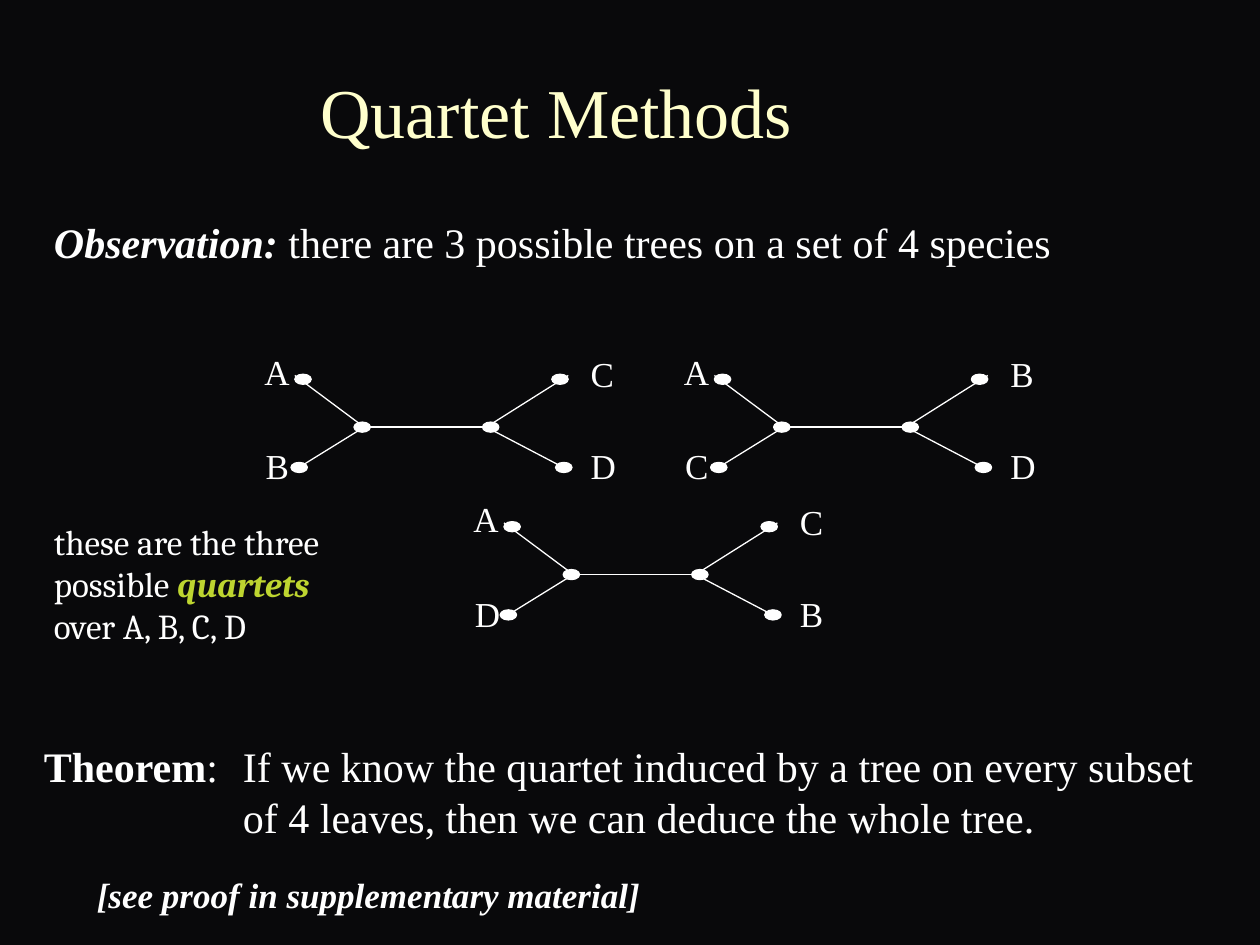
from lxml.etree import SubElement
from pptx import Presentation
from pptx.dml.color import RGBColor
from pptx.enum.shapes import MSO_CONNECTOR as CONN, MSO_SHAPE as SHAPE
from pptx.enum.text import MSO_ANCHOR as ANCHOR, PP_ALIGN as ALIGN
from pptx.oxml.ns import qn
from pptx.util import Inches, Pt

# Tree geometry, relative to the tree's top left corner
LEFT_HUB, RIGHT_HUB = (0.89, 0.66), (1.86, 0.66)
BRANCHES = [
    (LEFT_HUB, RIGHT_HUB),
    (RIGHT_HUB, (2.51, 1.0)),
    (RIGHT_HUB, (2.51, 0.25)),
    (LEFT_HUB, (0.34, 1.0)),
    (LEFT_HUB, (0.34, 0.25)),
]
NODES = [(0.81, 0.62), (1.83, 0.62), (0.34, 0.24),
         (0.31, 0.94), (2.38, 0.24), (2.41, 0.94)]
LABELS = [(0, 0), (0.01, 0.75), (2.59, 0.02), (2.59, 0.75)]

# Origin and leaves: top left, bottom left, top right, bottom right
TREES = [(2.0, 2.73, "ABCD"), (5.33, 2.73, "ACBD"), (3.66, 3.9, "ADCB")]


def rgb(value):
    return RGBColor.from_string(value)


class SlideBuilder:
    font = "Times New Roman"
    background = "09090B"
    ink = "FFFFFF"
    title_color = "FFFFCC"
    accent = "BED530"
    line_width = 0.75

    def __init__(self, prs):
        self.slide = prs.slides.add_slide(prs.slide_layouts[5])
        fill = self.slide.background.fill
        fill.solid()
        fill.fore_color.rgb = rgb(self.background)

    def format_run(self, r, size, color, font=None, bold=False, italic=False):
        r.font.name = font or self.font
        r.font.size = Pt(size)
        r.font.color.rgb = rgb(color)
        r.font.bold, r.font.italic = bold, italic

    def title(self, text, left, top, width, height):
        sp = self.slide.shapes.title
        sp.left, sp.top = Inches(left), Inches(top)
        sp.width, sp.height = Inches(width), Inches(height)
        tf = sp.text_frame
        tf.text = text
        tf.vertical_anchor = ANCHOR.MIDDLE
        p = tf.paragraphs[0]
        p.alignment = ALIGN.CENTER
        self.format_run(p.runs[0], 40, self.title_color)

    def text(self, runs, left, top, width, height, size=24, font=None, wrap=True):
        """Add a text box; each run is its text and a dict of format changes."""
        sp = self.slide.shapes.add_textbox(
            Inches(left), Inches(top), Inches(width), Inches(height))
        tf = sp.text_frame
        tf.word_wrap = wrap
        for text, changes in runs:
            r = tf.paragraphs[0].add_run()
            r.text = text
            style = {"color": self.ink, "font": font, **changes}
            self.format_run(r, size, **style)

    def line(self, x1, y1, x2, y2):
        cn = self.slide.shapes.add_connector(
            CONN.STRAIGHT, Inches(x1), Inches(y1), Inches(x2), Inches(y2))
        cn.line.color.rgb = rgb(self.ink)
        cn.line.width = Pt(self.line_width)
        SubElement(cn._element.spPr, qn("a:effectLst"))

    def node(self, left, top):
        sp = self.slide.shapes.add_shape(
            SHAPE.OVAL, Inches(left), Inches(top), Inches(0.13), Inches(0.08))
        sp.shadow.inherit = False
        sp.fill.solid()
        sp.fill.fore_color.rgb = rgb(self.ink)
        sp.line.color.rgb = rgb(self.ink)
        sp.line.width = Pt(self.line_width)

    def tree(self, x, y, leaves):
        for (x1, y1), (x2, y2) in BRANCHES:
            self.line(x + x1, y + y1, x + x2, y + y2)
        for dx, dy in NODES:
            self.node(x + dx, y + dy)
        for leaf, (dx, dy) in zip(leaves, LABELS):
            self.text([(leaf, {})], x + dx, y + dy, 0.4, 0.43, size=20, wrap=False)


def main():
    prs = Presentation()
    prs.slide_width, prs.slide_height = Inches(10), Inches(7.5)
    s = SlideBuilder(prs)
    strong = {"bold": True, "italic": True}

    s.title("Quartet Methods", 1, 0.25, 6.83, 1.25)
    s.text([("Observation:", strong),
            (" there are 3 possible trees on a set of 4 species", {})],
           0.33, 1.67, 8.25, 0.5)
    for x, y, leaves in TREES:
        s.tree(x, y, leaves)
    s.text([("these are the three possible ", {}),
            ("quartets ", {**strong, "color": s.accent}),
            ("over A, B, C, D", {})],
           0.33, 4.08, 2.33, 1.11, size=20, font="Cambria")
    s.text([("Theorem", {"bold": True}), (":", {})], 0.25, 5.83, 4.33, 0.5)
    s.text([("If we know the quartet induced by a tree on every subset "
             "of 4 leaves, then we can deduce the whole tree.", {})],
           1.83, 5.83, 7.92, 0.91)
    s.text([("[see proof in supplementary material]", strong)],
           0.67, 6.88, 5.75, 0.44, size=20)
    prs.save("out.pptx")


if __name__ == "__main__":
    main()
